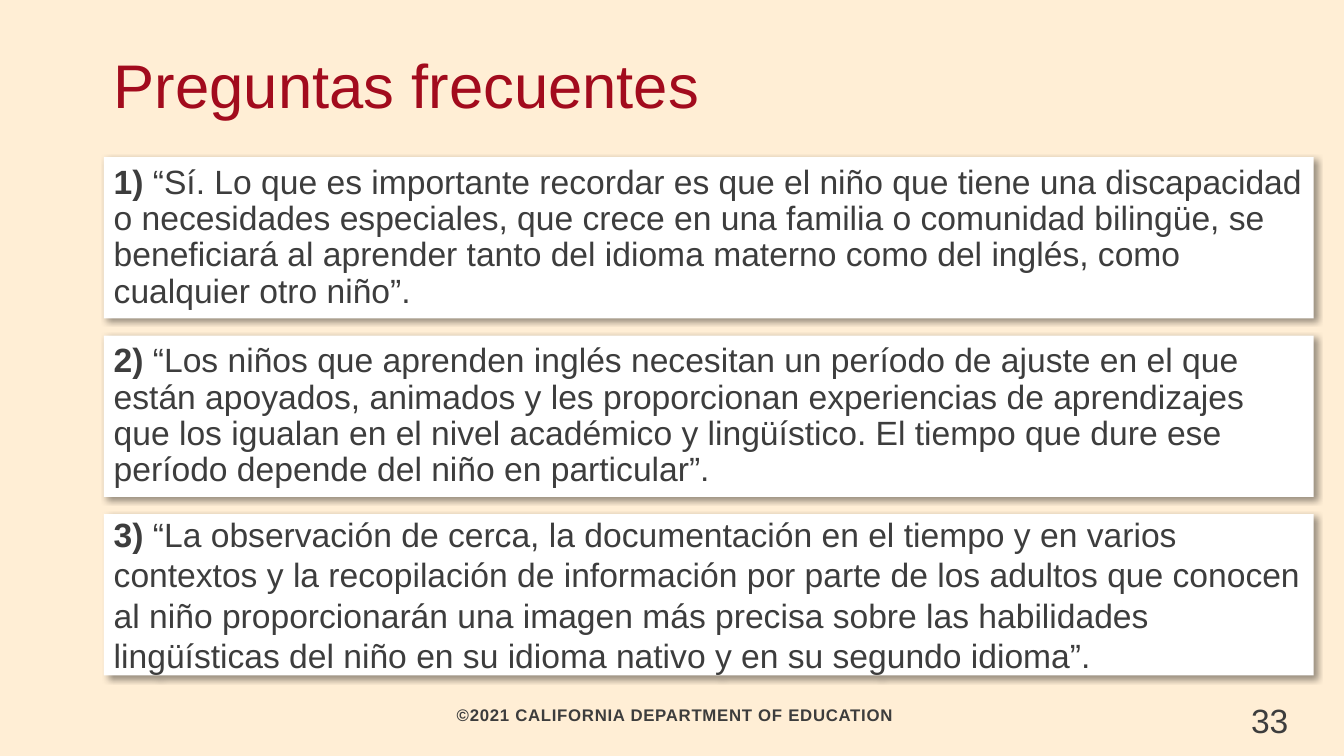
from dataclasses import dataclass

from lxml import etree
from pptx import Presentation
from pptx.dml.color import RGBColor
from pptx.enum.shapes import MSO_SHAPE
from pptx.enum.text import MSO_ANCHOR, PP_ALIGN
from pptx.oxml.ns import qn
from pptx.util import Inches, Pt

RECTANGLE = MSO_SHAPE.RECTANGLE
TOP, MIDDLE, BOTTOM = MSO_ANCHOR.TOP, MSO_ANCHOR.MIDDLE, MSO_ANCHOR.BOTTOM
LEFT, CENTER = PP_ALIGN.LEFT, PP_ALIGN.CENTER


@dataclass(frozen=True)
class Theme:
    background: str = "FFEED5"
    card: str = "FFFFFF"
    shadow: str = "000000"
    title: str = "A20B1D"
    text: str = "3D3D3D"
    font: str = "Arial"
    title_size: int = 44
    body_size: int = 24
    footer_size: int = 12


THEME = Theme()
WIDTH, HEIGHT = 13.33, 7.5
MARGIN, CONTENT_WIDTH = 1.03, 12
CARD_TOP, CARD_HEIGHT, CARD_GAP = 1.56, 1.6, 0.17

TIGHT = {"line_spacing": 0.9, "space_before": Pt(2), "space_after": Pt(2)}
ANSWERS = [
    ("“Sí. Lo que es importante recordar es que el niño que tiene una discapacidad "
     "o necesidades especiales, que crece en una familia o comunidad bilingüe, se "
     "beneficiará al aprender tanto del idioma materno como del inglés, como "
     "cualquier otro niño”.", TIGHT),
    ("“Los niños que aprenden inglés necesitan un período de ajuste en el que "
     "están apoyados, animados y les proporcionan experiencias de aprendizajes "
     "que los igualan en el nivel académico y lingüístico. El tiempo que dure ese "
     "período depende del niño en particular”.", TIGHT),
    ("“La observación de cerca, la documentación en el tiempo y en varios "
     "contextos y la recopilación de información por parte de los adultos que conocen "
     "al niño proporcionarán una imagen más precisa sobre las habilidades "
     "lingüísticas del niño en su idioma nativo y en su segundo idioma”.", {}),
]


def set_attributes(target, values):
    for name, value in values.items():
        setattr(target, name, value)


def write(shape, runs, size, color, anchor=TOP, **paragraph_format):
    """Fill a shape with one paragraph of (text, bold) runs."""
    frame = shape.text_frame
    set_attributes(frame, {"word_wrap": True, "vertical_anchor": anchor})
    paragraph = frame.paragraphs[0]
    set_attributes(paragraph, {"alignment": LEFT, **paragraph_format})
    for text, bold in runs:
        run = paragraph.add_run()
        run.text = text
        set_attributes(run.font, {"name": THEME.font, "size": Pt(size), "bold": bold})
        run.font.color.rgb = RGBColor.from_string(color)
    return paragraph


def add_text_box(slide, box):
    return slide.shapes.add_textbox(*map(Inches, box))


def add_soft_shadow(shape):
    shape.shadow.inherit = False
    effects = shape._element.spPr.find(qn("a:effectLst"))
    shadow = etree.SubElement(effects, qn("a:outerShdw"), {
        "blurRad": str(Pt(4)), "dist": str(Pt(3)), "dir": str(45 * 60000),
        "algn": "tl", "rotWithShape": "0"})
    color = etree.SubElement(shadow, qn("a:srgbClr"), val=THEME.shadow)
    etree.SubElement(color, qn("a:alpha"), val="40000")


def add_title(slide, box):
    write(add_text_box(slide, box), [("Preguntas frecuentes", False)],
          THEME.title_size, THEME.title, BOTTOM, line_spacing=0.85)


def add_answer_cards(slide, box):
    left, top, width, height = box
    for index, (answer, spacing) in enumerate(ANSWERS):
        card_top = top + index * (height + CARD_GAP)
        card = slide.shapes.add_shape(
            RECTANGLE, *map(Inches, (left, card_top, width, height)))
        card.fill.solid()
        card.fill.fore_color.rgb = RGBColor.from_string(THEME.card)
        card.line.fill.background()
        add_soft_shadow(card)
        write(card, [(f"{index + 1}) ", True), (answer, False)],
              THEME.body_size, THEME.text, MIDDLE, **spacing)


def add_footer(slide, box):
    left, top, width, height = box
    notice = add_text_box(slide, (left, top, width, height))
    notice.text_frame.margin_left = Inches(0.15)
    paragraph = write(notice, [("©2021 CALIFORNIA DEPARTMENT OF EDUCATION", True)],
                      THEME.footer_size, THEME.text, MIDDLE,
                      alignment=CENTER, line_spacing=0.95)
    paragraph.runs[0].font._element.set("spc", "50")
    number_left = left + width
    number = add_text_box(slide, (number_left, top - 0.07, WIDTH - number_left, 0.47))
    write(number, [("33", False)], THEME.body_size, THEME.text)


def main():
    presentation = Presentation()
    set_attributes(presentation, {"slide_width": Inches(WIDTH),
                                  "slide_height": Inches(HEIGHT)})
    slide = presentation.slides.add_slide(presentation.slide_layouts[6])
    slide.background.fill.solid()
    slide.background.fill.fore_color.rgb = RGBColor.from_string(THEME.background)
    add_title(slide, (MARGIN, 0, CONTENT_WIDTH, 1.25))
    add_answer_cards(slide, (MARGIN, CARD_TOP, CONTENT_WIDTH, CARD_HEIGHT))
    add_footer(slide, (MARGIN, 6.96, 11.28, 0.29))
    presentation.save("out.pptx")


if __name__ == "__main__":
    main()
